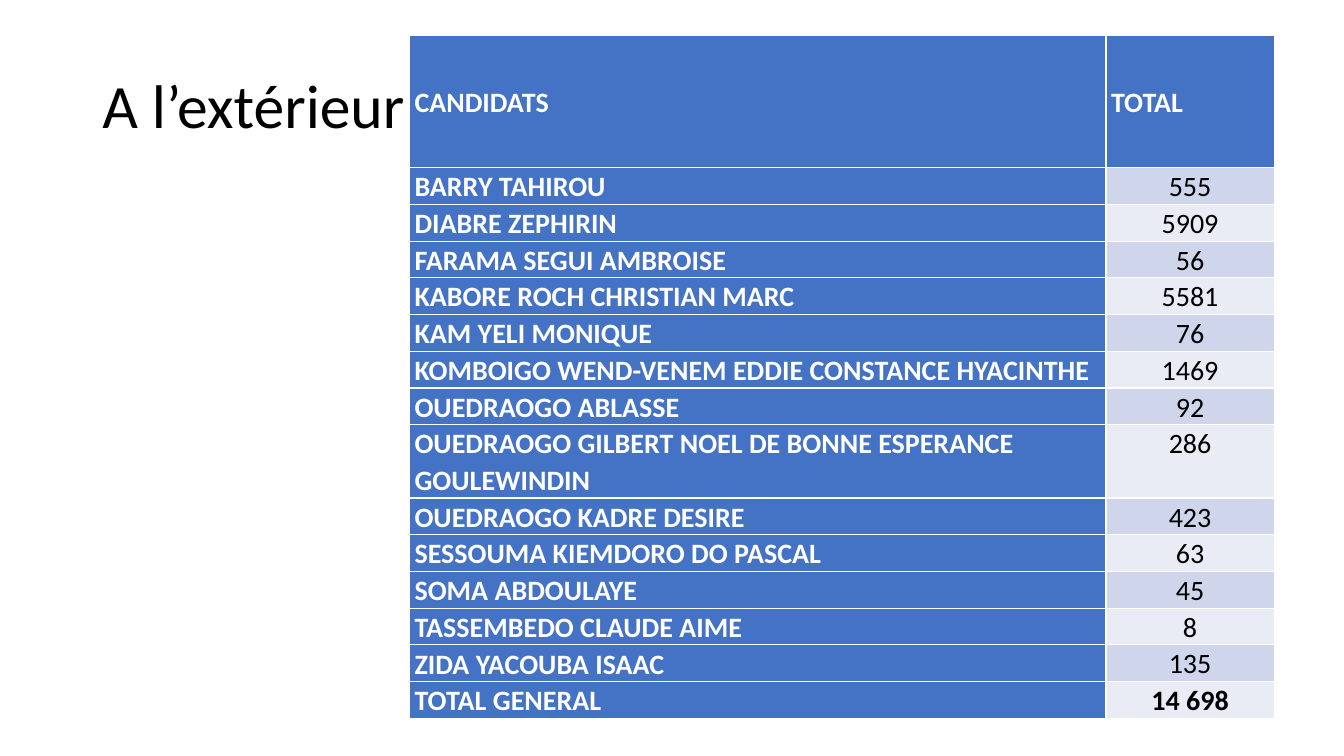
from pptx import Presentation
from pptx.dml.color import RGBColor
from pptx.enum import text
from pptx.util import Pt

COLORS = {"blue": "4472C4", "odd": "CFD5EA", "even": "E9EBF5", "white": "FFFFFF", "black": "000000"}
HEADER = ("CANDIDATS", "TOTAL")
RESULTS = [
    ("BARRY TAHIROU", "555"),
    ("DIABRE ZEPHIRIN", "5909"),
    ("FARAMA SEGUI AMBROISE", "56"),
    ("KABORE ROCH CHRISTIAN MARC", "5581"),
    ("KAM YELI MONIQUE", "76"),
    ("KOMBOIGO WEND-VENEM EDDIE CONSTANCE HYACINTHE", "1469"),
    ("OUEDRAOGO ABLASSE", "92"),
    ("OUEDRAOGO GILBERT NOEL DE BONNE ESPERANCE GOULEWINDIN", "286"),
    ("OUEDRAOGO KADRE DESIRE", "423"),
    ("SESSOUMA KIEMDORO DO PASCAL", "63"),
    ("SOMA ABDOULAYE", "45"),
    ("TASSEMBEDO CLAUDE AIME", "8"),
    ("ZIDA YACOUBA ISAAC", "135"),
    ("TOTAL GENERAL", "14 698"),
]
LONG_ROW = 8


def set_all(obj, **values):
    for name, value in values.items():
        setattr(obj, name, value)


def write(tf, words, color, font, para):
    p = tf.paragraphs[0]
    set_all(p, **para)
    r = p.add_run()
    r.text = words
    set_all(r.font, name="Calibri", **font)
    r.font.color.rgb = RGBColor.from_string(COLORS[color])


def add_title(s, words, left, top, width, height):
    sp = s.shapes.title
    set_all(sp, left=Pt(left), top=Pt(top), width=Pt(width), height=Pt(height))
    tf = sp.text_frame
    set_all(tf, vertical_anchor=text.MSO_ANCHOR.MIDDLE, word_wrap=True)
    write(tf, words, "black", {"size": Pt(44)},
          {"alignment": text.PP_ALIGN.LEFT, "line_spacing": 0.9})


def fill_cell(cell, words, row, col):
    value = row > 0 and col == 1
    fill = ("odd" if row % 2 else "even") if value else "blue"
    cell.fill.solid()
    cell.fill.fore_color.rgb = RGBColor.from_string(COLORS[fill])
    set_all(cell, margin_left=Pt(3.6), margin_right=Pt(3.6), margin_top=0, margin_bottom=0,
            vertical_anchor=text.MSO_ANCHOR.TOP if value else text.MSO_ANCHOR.MIDDLE)
    write(cell.text_frame, words, "black" if value else "white",
          {"size": Pt(20), "bold": not value or row == len(RESULTS)},
          {"alignment": text.PP_ALIGN.CENTER if value else text.PP_ALIGN.LEFT,
           "line_spacing": 1.07, "space_after": Pt(8)})


def add_results(s, left, top, width, height):
    rows = [HEADER] + RESULTS
    frame = s.shapes.add_table(len(rows), 2, Pt(left), Pt(top), Pt(width), Pt(height))
    table = frame.table
    table.first_col = True
    total_width = 120.2
    table.columns[0].width = Pt(width - total_width)
    table.columns[1].width = Pt(total_width)
    special = {0: 94.3, LONG_ROW: 51.8}
    row_height = (height - sum(special.values())) / (len(rows) - len(special))
    for i, row in enumerate(rows):
        table.rows[i].height = Pt(special.get(i, row_height))
        for j, words in enumerate(row):
            fill_cell(table.cell(i, j), words, i, j)


def main():
    prs = Presentation()
    set_all(prs, slide_width=Pt(960), slide_height=Pt(540))
    s = prs.slides.add_slide(prs.slide_layouts[5])
    add_title(s, "A l’extérieur", 66, 25.5, 828, 104.4)
    add_results(s, 292.5, 25.5, 617.7, 473.7)
    prs.save("out.pptx")


if __name__ == "__main__":
    main()
